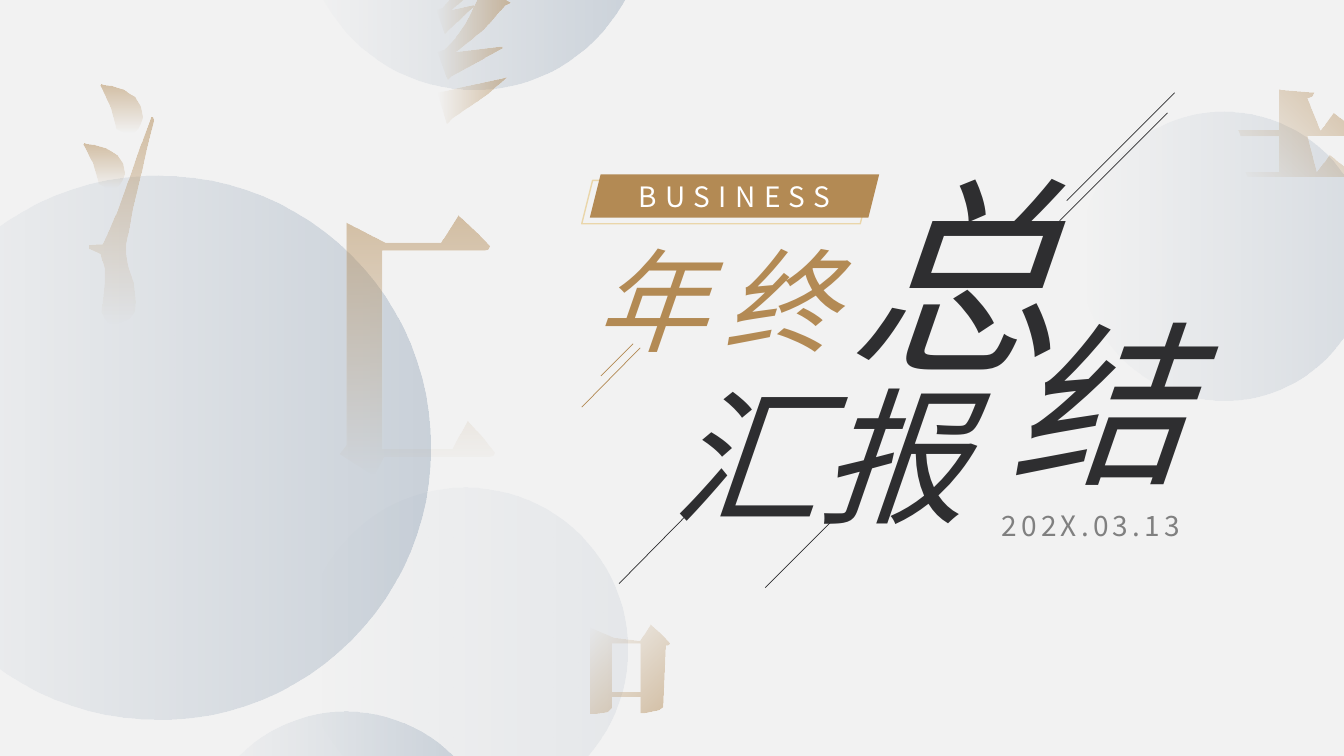
"""Build the cover slide of a year-end summary report."""
from lxml.etree import SubElement
from pptx import Presentation
from pptx.dml.color import RGBColor
from pptx.enum.shapes import MSO_CONNECTOR, MSO_SHAPE
from pptx.enum.text import MSO_ANCHOR, MSO_AUTO_SIZE, PP_ALIGN
from pptx.oxml.ns import qn
from pptx.util import Inches, Pt

FONT = "Noto Sans CJK SC"
COLORS = {"paper": "F2F2F2", "blue": "6A839F", "gold": "B38A54", "sand": "EAD6AA",
          "ink": "2E2E30", "gray": "808080", "white": "FFFFFF"}

# left, top, diameter, opacity
CIRCLES = [(-1.13, 1.74, 5.4, 30), (3.01, 4.84, 3.21, 10), (1.94, 7.06, 2.98, 30),
           (10.71, 1.11, 2.86, 20), (3.01, -2.49, 3.38, 30)]

# text, box, size, color, italic, letter spacing
TITLE = ("年终", (5.47, 2.25, 3.25, 1.43), 80, "gold", True, 12)
DATE = ("202X.03.13", (9.63, 4.99, 2.38, 0.43), 20, "gray", False, 3)
WORDS = [("汇报", (5.93, 3.58, 4.38, 1.85), 105, "ink", True, 0),
         ("总", (8.18, 1.39, 2.53, 2.6), 150, "ink", True, 12),
         ("结", (9.62, 2.88, 2.53, 2.2), 126, "ink", True, 12)]
BANNER = ("BUSINESS", (5.85, 1.73, 2.87, 0.43), 20, "white", False, 6)
FRAME = (5.77, 1.79, 2.87, 0.43)

# start x, start y, end x, end y, color
LINES = [(8.28, 5.14, 7.59, 5.83, "ink"), (6.35, 3.45, 5.77, 4.04, "gold"),
         (6.81, 5.11, 6.14, 5.79, "ink"), (11.58, 1.12, 10.51, 2.19, "ink"),
         (11.65, 0.92, 10.58, 1.99, "ink"), (6.28, 3.41, 5.96, 3.73, "gold")]

# brush marks within a unit box: corner points, or rows of height, left, right
SERIF = [(-0.55, 0.77), (0, 0), (0.55, 0.46), (1, 0.88), (0.94, 0.97), (0.78, 1)]
SLIVER = [(1, 0), (0.7, 0.39), (0.22, 0.87), (0.14, 1), (0, 0.33), (0.6, 0.13)]
DROP = [(0, 0.03, 0.05), (0.03, 0.01, 0.28), (0.1, 0.06, 0.55), (0.25, 0.14, 0.81),
        (0.43, 0.24, 0.95), (0.65, 0.31, 1), (0.8, 0.36, 0.94), (0.88, 0.38, 0.88),
        (0.96, 0.56, 0.79)]
SPINE = [(1.17, 1.49, 1.51), (1.2, 1.48, 1.52), (1.47, 1.38, 1.45), (1.79, 1.27, 1.38),
         (2.08, 1.17, 1.31), (2.27, 1.09, 1.28), (2.42, 1.02, 1.25), (2.43, 0.89, 1.25),
         (2.47, 0.89, 1.25), (2.52, 1, 1.25), (2.66, 1.04, 1.27), (2.8, 1.04, 1.32),
         (2.99, 1.02, 1.34), (3.09, 1.01, 1.33), (3.16, 1.04, 1.28), (3.22, 1.09, 1.14)]
DROPS = [(0.99, 0.84, 0.42, 0.49), (0.82, 1.42, 0.41, 0.46)]
HOOKS = [((4.33, -0.46, 0.59, 0.8), 0.62), ((4.34, -0.13, 0.72, 0.92), 0.88)]
TAIL = (4.34, 0.77, 0.68, 0.46)


def fit(points, box):
    left, top, wide, high = box
    return [(left + x * wide, top + y * high) for x, y in points]


def sweep(rows):
    return [(right, y) for y, _, right in rows] + [(left, y) for y, left, _ in rows[::-1]]


def hook(reach):
    head = [(0.63, 0), (1, 0.17), (0.92, 0.2), (0.63, 0.46), (0.25, 0.7)]
    foot = [(reach, 0.64), (reach, 0.66), (0.19, 0.96), (0.14, 1), (0, 0.7)]
    return head + foot + [(0.1, 0.67), (0.24, 0.55), (0.39, 0.38)]


def basin():
    left, inner, top, base = 3.44, 3.79, 2.49, 4.45
    roof = fit(SERIF, (4.54, 2.14, 0.31, 0.35))
    floor = fit(SERIF, (4.63, 4.17, 0.27, 0.36))
    heel = [(3.81, 4.53), (3.71, 4.72), (3.37, 4.5)]
    post = [(left, 4.41), (left, 2.21), (3.82, 2.41)]
    return [roof + [(inner, top), (inner, base)] + floor + heel + post]


def earth():
    left, right = 12.68, 12.96
    bars = [(12.28, 1.29, 1.35, (13.22, 1.12, 0.24, 0.23)),
            (12.35, 1.7, 1.75, (13.18, 1.53, 0.23, 0.22))]
    east = [(left, 0.89), (13.03, 0.92), (13.01, 0.96), (right, 0.98)]
    west = []
    for start, top, base, tip in bars:
        east += fit(SERIF, tip) + [(right, base)]
        west = [(left, base), (start + 0.02, base), (start, top), (left, top)] + west
    return [east + west]


def mouth():
    left, inner, far, right = 5.86, 6.07, 6.35, 6.57
    roof = fit(SERIF, (6.45, 6.2, 0.19, 0.21))
    east = [(right, 7.01), (6.53, 7.04), (6.39, 7.07), (far, 7.07)]
    west = [(inner, 7.02), (6.03, 7.06), (5.9, 7.08), (left, 7.08)]
    outer = roof + east + [(far, 6.91), (inner, 6.91)] + west
    hole = [(inner, 6.39), (inner, 6.86), (far, 6.86), (far, 6.39)]
    return [outer + [(left, 6.23), (6.09, 6.33)], hole]


def glyphs():
    water = [sweep(SPINE)] + [fit([(x, y) for x, y in sweep(DROP)], box) for box in DROPS]
    silk = [fit(hook(reach), box) for box, reach in HOOKS]
    return ([(90, basin())] + [(90, [stroke]) for stroke in water]
            + [(135, earth()), (225, mouth()), (180, silk), (180, [fit(SLIVER, TAIL)])])


def rgb(name):
    return RGBColor.from_string(COLORS[name])


def fade(shape, color, alpha, angle):
    shape.shadow.inherit = False
    shape.line.fill.background()
    shape.fill.gradient()
    shape.fill.gradient_angle = 360 - angle
    for stop in shape.fill.gradient_stops:
        stop.color.rgb = rgb(color)
    tints = shape._element.spPr.iter(qn("a:srgbClr"))
    for tint, value in zip(list(tints), (alpha, 0)):
        SubElement(tint, qn("a:alpha")).set("val", str(value * 1000))


def draw(shapes, outlines):
    loops = [[(Inches(x), Inches(y)) for x, y in outline] for outline in outlines]
    pen = shapes.build_freeform(*loops[0][0], scale=1.0)
    for loop in loops:
        if loop is not loops[0]:
            pen.move_to(*loop[0])
        pen.add_line_segments(loop[1:], close=True)
    return pen.convert_to_shape()


def write(shape, item, anchor=MSO_ANCHOR.TOP, side=0.1):
    text, box, size, color, slant, gap = item
    shape.left, shape.top, shape.width, shape.height = map(Inches, box)
    frame = shape.text_frame
    frame.word_wrap = True
    frame.auto_size = MSO_AUTO_SIZE.NONE
    frame.vertical_anchor = anchor
    frame.margin_left = frame.margin_right = Inches(side)
    frame.margin_top = frame.margin_bottom = Inches(0.05)
    para = frame.paragraphs[0]
    para.alignment = PP_ALIGN.CENTER
    para.space_before = Pt(0)
    run = para.add_run()
    run.text = text
    font = run.font
    font.size, font.italic, font.name = Pt(size), slant, FONT
    font.color.rgb = rgb(color)
    props = run._r.get_or_add_rPr()
    props.set("spc", str(gap * 100))
    SubElement(props, qn("a:ea")).set("typeface", FONT)


def main():
    deck = Presentation()
    deck.slide_width, deck.slide_height = Inches(13.33), Inches(7.5)
    slide = deck.slides.add_slide(deck.slide_layouts[0])
    slide.background.fill.solid()
    slide.background.fill.fore_color.rgb = rgb("paper")
    shapes = slide.shapes
    write(shapes.title, TITLE)
    write(slide.placeholders[1], DATE)

    for left, top, size, alpha in CIRCLES:
        disc = shapes.add_shape(MSO_SHAPE.OVAL, *map(Inches, (left, top, size, size)))
        fade(disc, "blue", alpha, 180)
    for angle, outlines in glyphs():
        fade(draw(shapes, outlines), "gold", 50, angle)

    frame, banner = [shapes.add_shape(MSO_SHAPE.PARALLELOGRAM, *map(Inches, box))
                     for box in (FRAME, BANNER[1])]
    frame.shadow.inherit = banner.shadow.inherit = False
    frame.fill.background()
    frame.line.color.rgb = rgb("sand")
    frame.line.width = Pt(1)
    banner.fill.solid()
    banner.fill.fore_color.rgb = rgb("gold")
    banner.line.fill.background()
    write(banner, BANNER, MSO_ANCHOR.MIDDLE, 0.04)

    for item in WORDS:
        write(shapes.add_textbox(*map(Inches, item[1])), item)
    for *ends, color in LINES:
        line = shapes.add_connector(MSO_CONNECTOR.STRAIGHT, *map(Inches, ends))
        line.line.color.rgb = rgb(color)
        line.line.width = Pt(0.5)
        SubElement(line._element.spPr, qn("a:effectLst"))
    deck.save("out.pptx")


if __name__ == "__main__":
    main()
